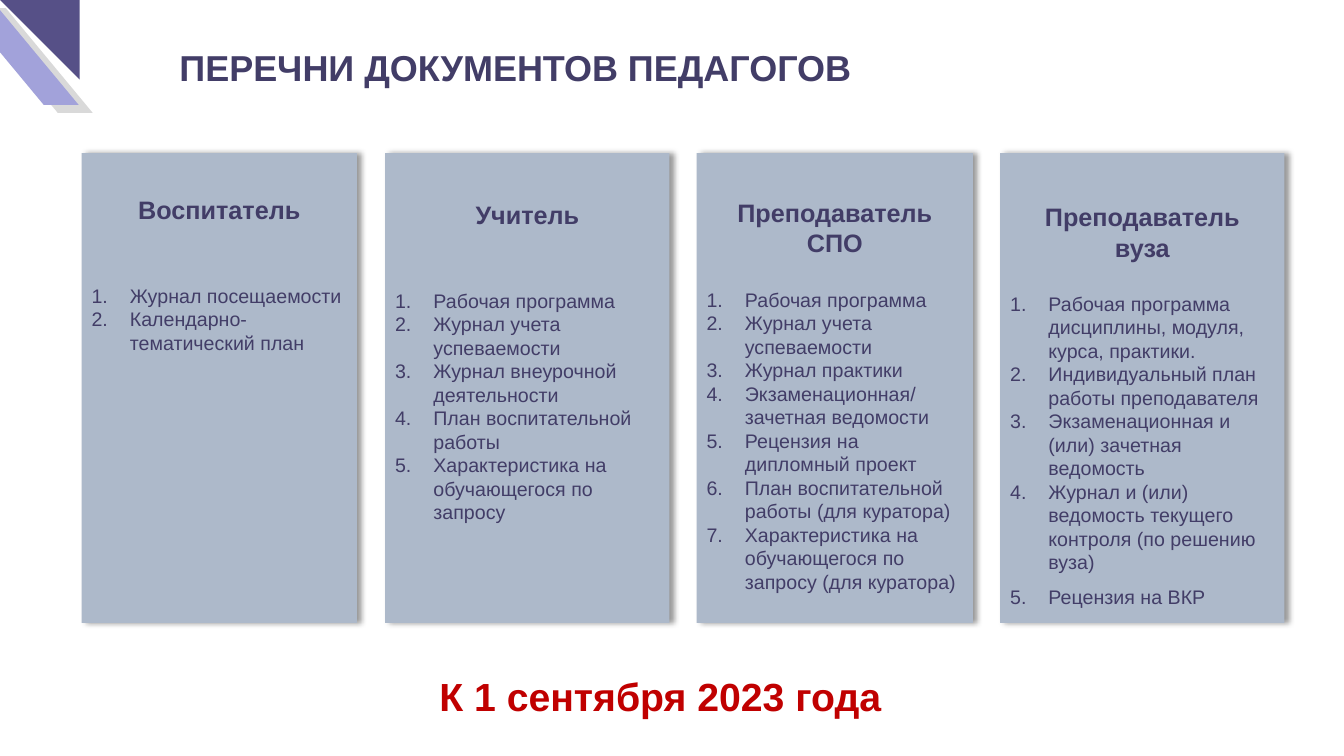
from lxml import etree
from pptx import Presentation
from pptx import util as u
from pptx.dml.color import RGBColor
from pptx.enum import shapes, text
from pptx.oxml import ns

COLORS = {"ink": "423D67", "card": "ADB9CA", "date": "C00000",
          "grey": "D9D9D9", "lilac": "A2A2DA", "violet": "565087"}
CARDS = [
    (0.81, 2.73, 0.41, 42, ["Воспитатель"],
     ["Журнал посещаемости", "Календарно-тематический план"]),
    (3.82, 2.82, 0.46, 42, ["Учитель"],
     ["Рабочая программа", "Журнал учета успеваемости",
      "Журнал внеурочной деятельности", "План воспитательной работы",
      "Характеристика на обучающегося по запросу"]),
    (6.91, 2.74, 0.44, 21, ["Преподаватель", "СПО"],
     ["Рабочая программа", "Журнал учета успеваемости", "Журнал практики",
      "Экзаменационная/ зачетная ведомости", "Рецензия на дипломный проект",
      "План воспитательной работы (для куратора)",
      "Характеристика на обучающегося по запросу (для куратора)"]),
    (9.92, 2.82, 0.48, 21, ["Преподаватель", "вуза"],
     ["Рабочая программа дисциплины, модуля, курса, практики.",
      "Индивидуальный план работы преподавателя",
      "Экзаменационная и (или) зачетная ведомость",
      "Журнал и (или) ведомость текущего контроля (по решению вуза)",
      "Рецензия на ВКР"]),
]


class TeacherSlide:
    """Holds the style and the slide of teachers' document lists."""

    def __init__(self, presentation):
        self.font = "Arial"
        self.slide = presentation.slides.add_slide(presentation.slide_layouts[5])

    def add_words(self, paragraph, words, size, color="ink", bold=True):
        run = paragraph.add_run()
        run.text = words
        run.font.name, run.font.size, run.font.bold = self.font, u.Pt(size), bold
        run.font.color.rgb = RGBColor.from_string(COLORS[color])

    def place(self, shape, left, top, width, height):
        shape.left, shape.top = u.Inches(left), u.Inches(top)
        shape.width, shape.height = u.Inches(width), u.Inches(height)

    def title(self, words, box):
        shape = self.slide.shapes.title
        self.place(shape, *box)
        frame = shape.text_frame
        frame.auto_size = text.MSO_AUTO_SIZE.NONE
        frame.vertical_anchor = text.MSO_ANCHOR.MIDDLE
        frame.paragraphs[0].alignment = text.PP_ALIGN.LEFT
        self.add_words(frame.paragraphs[0], words, 25.7)

    def label(self, words, box, size, color):
        shape = self.slide.shapes.add_textbox(*map(u.Inches, box))
        shape.text_frame.word_wrap = True
        self.add_words(shape.text_frame.paragraphs[0], words, size, color)

    def block(self, kind, box, color):
        shape = self.slide.shapes.add_shape(kind, *map(u.Inches, box))
        shape.shadow.inherit = False
        shape.fill.solid()
        shape.fill.fore_color.rgb = RGBColor.from_string(COLORS[color])
        shape.line.fill.background()
        return shape

    def corner(self, kind, box, color, flips, slant=None):
        shape = self.block(kind, box, color)
        for flip in flips:
            shape._element.spPr.xfrm.set(flip, "1")
        if slant:
            shape.adjustments[0] = slant

    def cast_shadow(self, shape):
        effects = shape._element.spPr.find(ns.qn("a:effectLst"))
        shadow = etree.SubElement(
            effects, ns.qn("a:outerShdw"), blurRad=str(u.Pt(4)),
            dist=str(u.Pt(3)), dir="0", algn="l", rotWithShape="0")
        color = etree.SubElement(shadow, ns.qn("a:srgbClr"), val="000000")
        etree.SubElement(color, ns.qn("a:alpha"), val="40000")

    def number(self, paragraph):
        properties = paragraph._p.get_or_add_pPr()
        indent = u.Inches(0.38)
        properties.set("marL", str(indent))
        properties.set("indent", str(-indent))
        etree.SubElement(properties, ns.qn("a:buFont"), typeface=self.font)
        etree.SubElement(properties, ns.qn("a:buAutoNum"), type="arabicPeriod")

    def card(self, left, width, inset, gap, heading, documents):
        shape = self.block(shapes.MSO_SHAPE.RECTANGLE, (left, 1.52, width, 4.66), "card")
        self.cast_shadow(shape)
        frame = shape.text_frame
        frame.word_wrap = True
        frame.vertical_anchor = text.MSO_ANCHOR.TOP
        frame.margin_top = u.Inches(inset)
        for index, words in enumerate(heading):
            paragraph = frame.add_paragraph() if index else frame.paragraphs[0]
            paragraph.alignment = text.PP_ALIGN.CENTER
            self.add_words(paragraph, words, 18)
        paragraph.space_after = u.Pt(gap)
        for words in documents:
            paragraph = frame.add_paragraph()
            paragraph.alignment = text.PP_ALIGN.LEFT
            if words == "Рецензия на ВКР":
                paragraph.space_before = u.Pt(8)
            self.number(paragraph)
            self.add_words(paragraph, words, 14, bold=False)


def main():
    presentation = Presentation()
    presentation.slide_width = u.Inches(13.33)
    presentation.slide_height = u.Inches(7.5)
    page = TeacherSlide(presentation)
    kinds = shapes.MSO_SHAPE
    for left, top, color in [(-0.29, 0.08, "grey"), (-0.43, 0, "lilac")]:
        page.corner(kinds.PARALLELOGRAM, (left, top, 1.21, 1.04), color, ["flipH"], 0.83)
    page.corner(kinds.RIGHT_TRIANGLE, (0, 0, 0.79, 0.79), "violet", ["flipH", "flipV"])
    page.title("ПЕРЕЧНИ ДОКУМЕНТОВ ПЕДАГОГОВ", (1.68, 0.4, 9.48, 0.53))
    for card in CARDS:
        page.card(*card)
    page.label("К 1 сентября 2023 года", (4.26, 6.62, 6, 0.57), 28, "date")
    presentation.save("out.pptx")


if __name__ == "__main__":
    main()
